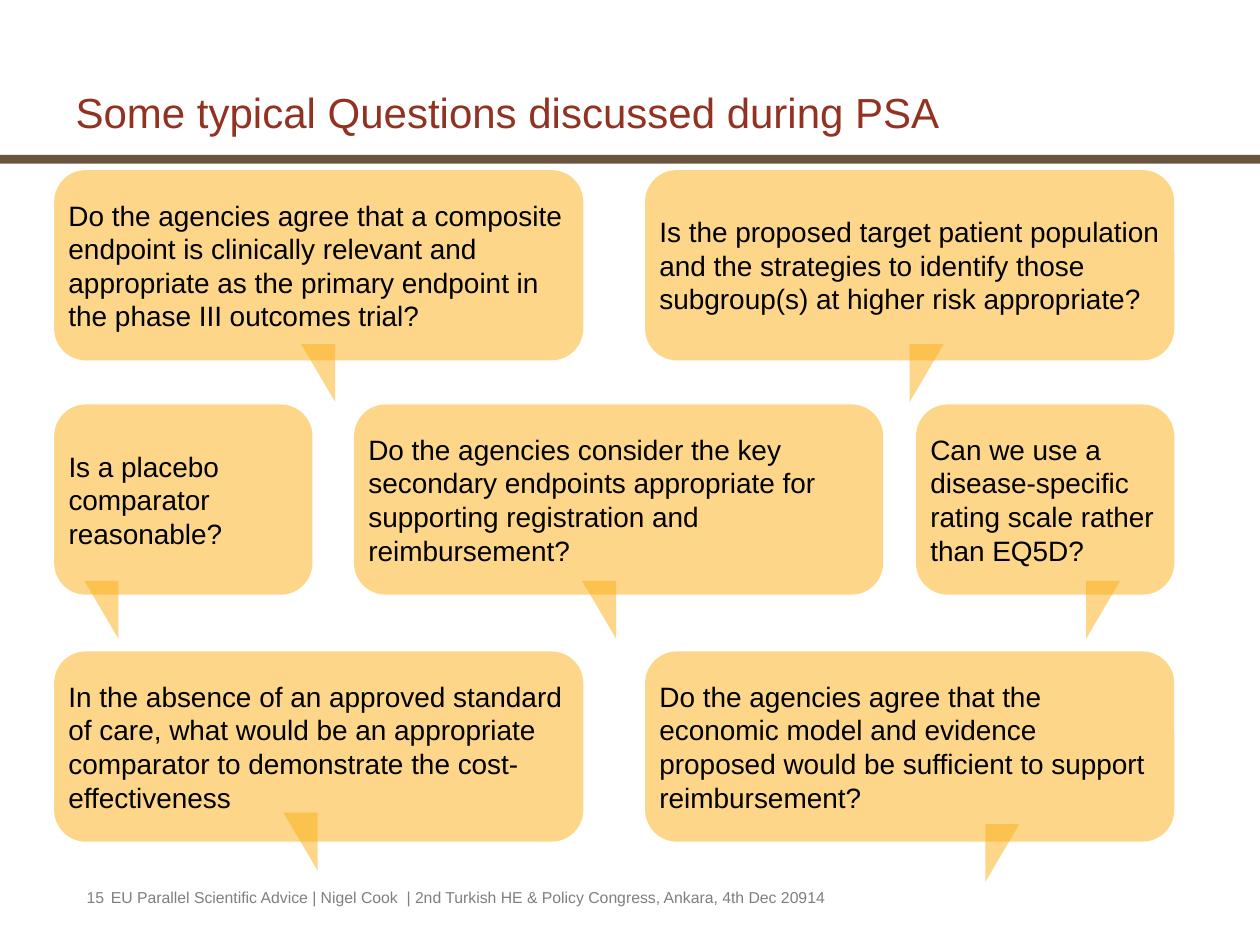
import pptx
import pptx.dml.color
import pptx.enum.shapes
import pptx.enum.text
import pptx.oxml
import pptx.oxml.ns
import pptx.util

Inches = pptx.util.Inches
RGBColor = pptx.dml.color.RGBColor
SHAPES = pptx.enum.shapes.MSO_SHAPE
ANCHOR = pptx.enum.text.MSO_ANCHOR

TITLE_RED = RGBColor(0x92, 0x32, 0x22)
BAR_BROWN = RGBColor(0x6A, 0x55, 0x40)
BUBBLE_AMBER = RGBColor(0xFC, 0xAF, 0x17)
TEXT_BLACK = RGBColor(0, 0, 0)
FOOTER_GREY = RGBColor(0x7F, 0x7F, 0x7F)

WIDE, NARROW, BUBBLE_HEIGHT = 4.2, 2.05, 1.51
LEFT, RIGHT = 0.43, 9.32
TOP_ROW, MIDDLE_ROW, BOTTOM_ROW = 1.35, 3.21, 5.17
TAIL_WIDTH, TAIL_HEIGHT = 0.27, 0.46

# Question, left, top, width, tail offset (x, y) in the bubble, tail mirrored
QUESTIONS = [
    ("Do the agencies agree that a composite endpoint is clinically relevant and "
     "appropriate as the primary endpoint in the phase III outcomes trial?",
     LEFT, TOP_ROW, WIDE, (1.96, 1.38), False),
    ("Is the proposed target patient population and the strategies to identify "
     "those subgroup(s) at higher risk appropriate?",
     RIGHT - WIDE, TOP_ROW, WIDE, (2.1, 1.38), True),
    ("Is a placebo comparator reasonable?",
     LEFT, MIDDLE_ROW, NARROW, (0.24, 1.4), False),
    ("Do the agencies consider the key secondary endpoints appropriate for "
     "supporting registration and reimbursement?",
     2.81, MIDDLE_ROW, WIDE, (1.81, 1.4), False),
    ("Can we use a disease-specific rating scale rather than EQ5D?",
     RIGHT - NARROW, MIDDLE_ROW, NARROW, (1.35, 1.4), True),
    ("In the absence of an approved standard of care, what would be an "
     "appropriate comparator to demonstrate the cost-effectiveness",
     LEFT, BOTTOM_ROW, WIDE, (1.82, 1.28), False),
    ("Do the agencies agree that the economic model and evidence proposed would "
     "be sufficient to support reimbursement?",
     RIGHT - WIDE, BOTTOM_ROW, WIDE, (2.7, 1.37), True),
]


def write(frame, text, size, color):
    """Fill a text frame with one left-aligned Arial paragraph."""
    frame.text = text
    frame.word_wrap = True
    paragraph = frame.paragraphs[0]
    paragraph.alignment = pptx.enum.text.PP_ALIGN.LEFT
    font = paragraph.runs[0].font
    font.name = "Arial"
    font.size = pptx.util.Pt(size)
    font.color.rgb = color
    return paragraph


def add_filled(slide, preset, left, top, width, height, color, alpha=None):
    """Add a borderless preset shape; alpha is its opacity in percent."""
    shape = slide.shapes.add_shape(
        preset, Inches(left), Inches(top), Inches(width), Inches(height))
    shape.shadow.inherit = False
    shape.fill.solid()
    shape.fill.fore_color.rgb = color
    shape.line.fill.background()
    if alpha is not None:
        rgb = shape.fill._xPr.find(".//" + pptx.oxml.ns.qn("a:srgbClr"))
        opacity = pptx.oxml.parse_xml(
            f'<a:alpha {pptx.oxml.ns.nsdecls("a")} val="{alpha * 1000}"/>')
        rgb.append(opacity)
    return shape


def add_header(slide, left, top, width, height):
    add_filled(slide, SHAPES.RECTANGLE, 0, 1.23, 10, 0.07, BAR_BROWN)
    title = slide.shapes.title
    title.left, title.top = Inches(left), Inches(top)
    title.width, title.height = Inches(width), Inches(height)
    paragraph = write(title.text_frame,
                      "Some typical Questions discussed during PSA", 24, TITLE_RED)
    paragraph.line_spacing = 0.95
    title.text_frame.vertical_anchor = ANCHOR.BOTTOM


def add_bubble(slide, question, left, top, width, tail_offset, mirrored):
    bubble = add_filled(slide, SHAPES.ROUNDED_RECTANGLE, left, top, width,
                        BUBBLE_HEIGHT, BUBBLE_AMBER, alpha=50)
    frame = bubble.text_frame
    write(frame, question, 16, TEXT_BLACK)
    frame.vertical_anchor = ANCHOR.MIDDLE
    frame.margin_left = frame.margin_right = Inches(0.04)
    frame.margin_top = frame.margin_bottom = Inches(0.05)

    tail = add_filled(slide, SHAPES.RIGHT_TRIANGLE, left + tail_offset[0],
                      top + tail_offset[1], TAIL_WIDTH, TAIL_HEIGHT,
                      BUBBLE_AMBER, alpha=50)
    tail.rotation = 180
    if mirrored:
        tail._element.spPr.xfrm.set("flipH", "1")


def add_footer(slide, left, top, height):
    parts = [
        ("15", 0, 0.44, 0.1),
        ("EU Parallel Scientific Advice | Nigel Cook  | 2nd Turkish HE & Policy "
         "Congress, Ankara, 4th Dec 20914", 0.16, 7.08, 0.13),
    ]
    for text, offset, width, indent in parts:
        box = slide.shapes.add_textbox(Inches(left + offset), Inches(top),
                                       Inches(width), Inches(height))
        write(box.text_frame, text, 9, FOOTER_GREY)
        box.text_frame.margin_left = Inches(indent)


def main():
    deck = pptx.Presentation()
    deck.slide_width, deck.slide_height = Inches(10), Inches(7.5)
    slide = deck.slides.add_slide(deck.slide_layouts.get_by_name("Title Only"))
    add_header(slide, 0.5, 0.34, 9, 0.81)
    for question in QUESTIONS:
        add_bubble(slide, *question)
    add_footer(slide, 0.59, 7, 0.27)
    deck.save("out.pptx")


if __name__ == "__main__":
    main()
